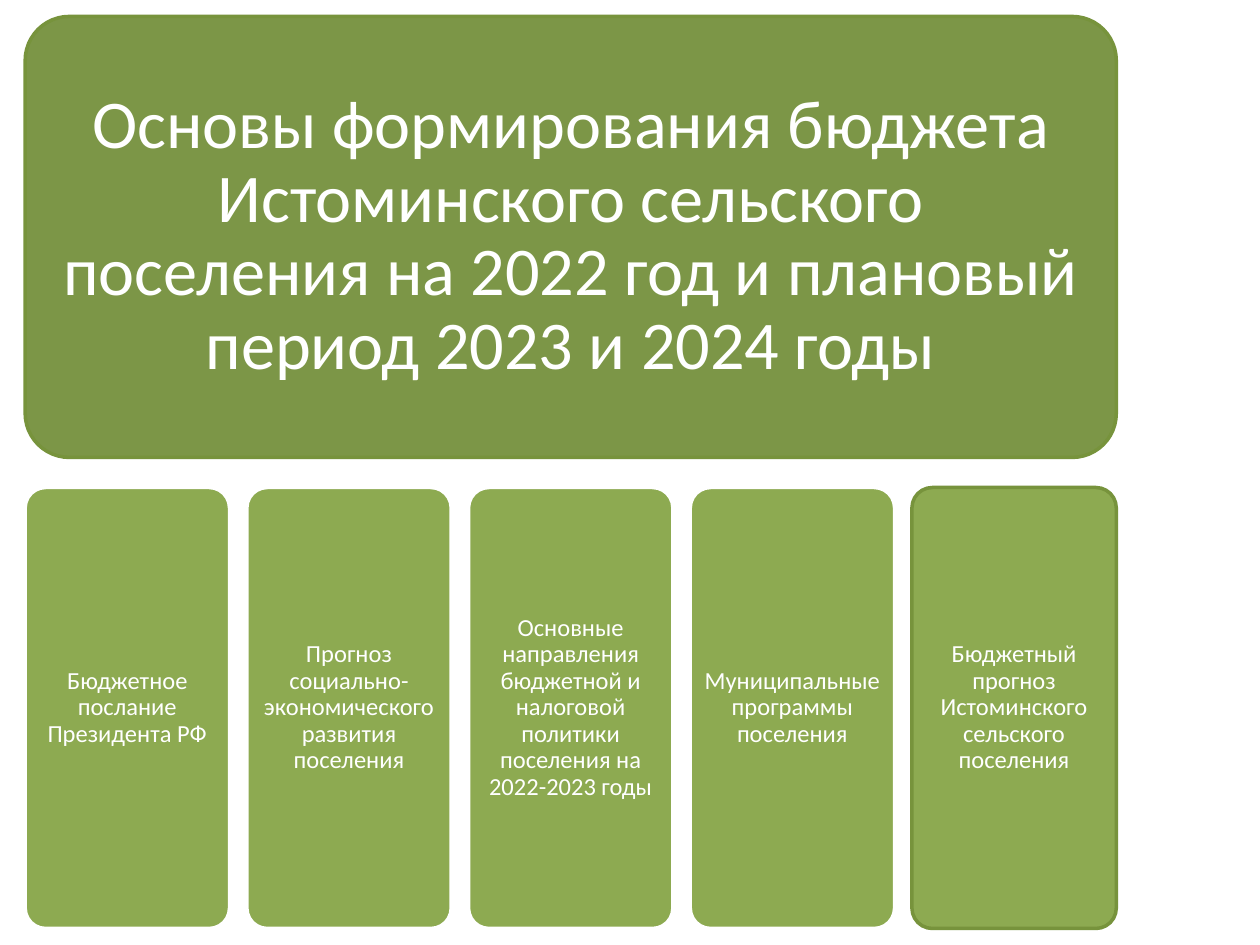
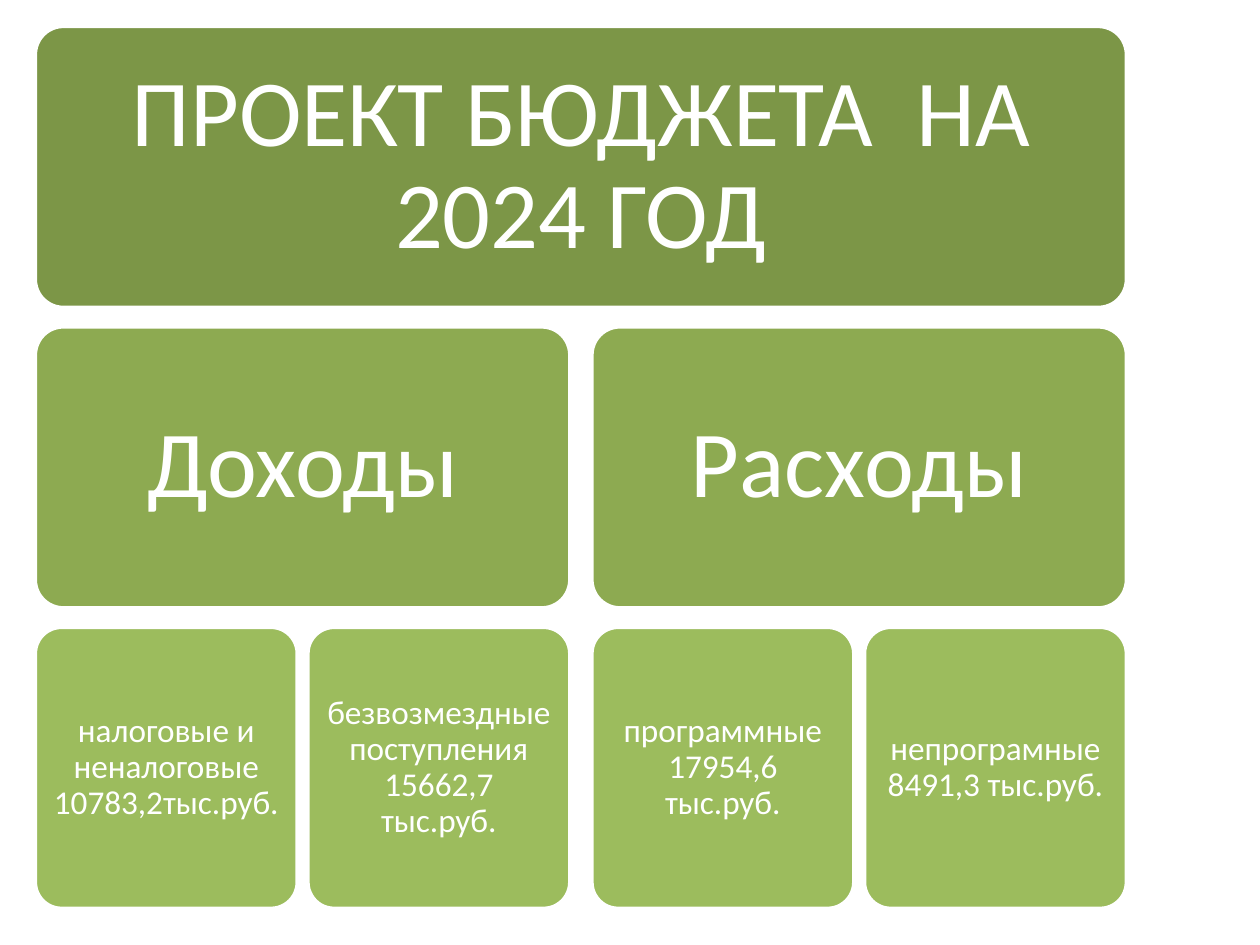
import dataclasses

import pptx
import pptx.dml.color
import pptx.enum.shapes
import pptx.enum.text
import pptx.util

Pt = pptx.util.Pt


@dataclasses.dataclass(frozen=True)
class Theme:
    font: str = "Calibri"
    white: str = "FFFFFF"
    outline: str = "77933C"
    dark: str = "7C9647"
    middle: str = "8DAA51"
    light: str = "9CBC5D"
    long_title: float = 39
    large: float = 54
    detail: float = 19
    small: float = 14
    line_width: float = 2
    corner: float = 0.1
    inset_ratio: float = 0.3  # text margin as a share of the type size


theme = Theme()


def write(box, text, *, size):
    frame = box.text_frame
    frame.word_wrap = True
    frame.auto_size = pptx.enum.text.MSO_AUTO_SIZE.NONE
    frame.vertical_anchor = pptx.enum.text.MSO_ANCHOR.MIDDLE
    inset = Pt(size * theme.inset_ratio)
    frame.margin_left = frame.margin_right = inset
    frame.margin_top = frame.margin_bottom = inset
    para = frame.paragraphs[0]
    para.alignment = pptx.enum.text.PP_ALIGN.CENTER
    para.line_spacing = 0.9
    span = para.add_run()
    span.text = text
    span.font.name = theme.font
    span.font.size = Pt(size)
    span.font.color.rgb = pptx.dml.color.RGBColor.from_string(theme.white)


def add_card(page, left, top, width, height, fill, line=theme.white):
    card = page.shapes.add_shape(
        pptx.enum.shapes.MSO_SHAPE.ROUNDED_RECTANGLE,
        Pt(left), Pt(top), Pt(width), Pt(height))
    card.adjustments[0] = theme.corner
    card.shadow.inherit = False
    card.fill.solid()
    card.fill.fore_color.rgb = pptx.dml.color.RGBColor.from_string(fill)
    card.line.color.rgb = pptx.dml.color.RGBColor.from_string(line)
    card.line.width = Pt(theme.line_width)
    return card


deck = pptx.Presentation()
deck.slide_width, deck.slide_height = Pt(720), Pt(540)
content_width = 623.5

# Banners with titles, shared by both slides
banners = [
    ("Основы формирования бюджета Истоминского сельского поселения "
     "на 2022 год и плановый период 2023 и 2024 годы",
     theme.long_title, 14.4, 9.4, 252, theme.outline),
    ("ПРОЕКТ БЮДЖЕТА  НА 2024 ГОД",
     theme.large, 20.2, 15.1, 160.6, theme.white),
]
for text, size, left, top, height, line in banners:
    page = deck.slides.add_slide(deck.slide_layouts[5])
    add_card(page, left, top, content_width, height, theme.dark, line)
    # The title fills the area inside the rounded corners, above the banner
    title = page.shapes.title
    corner_inset = 0.29 * theme.corner * height
    title.left, title.top = Pt(left + corner_inset), Pt(top + corner_inset)
    title.width = Pt(content_width - 2 * corner_inset)
    title.height = Pt(height - 2 * corner_inset)
    write(title, text, size=size)
    title.element.getparent().append(title.element)

basis_page, budget_page = deck.slides

# Slide 1: five foundations of the budget
foundations = [
    "Бюджетное послание Президента РФ",
    "Прогноз социально-экономического развития поселения",
    "Основные направления бюджетной и налоговой политики поселения "
    "на 2022-2023 годы",
    "Муниципальные программы поселения",
    "Бюджетный прогноз Истоминского сельского поселения",
]
gap = 9.9
width = (content_width - gap * (len(foundations) - 1)) / len(foundations)
for index, text in enumerate(foundations):
    is_last = index == len(foundations) - 1
    card = add_card(basis_page, 14.4 + index * (width + gap), 278.6,
                    width, 252, theme.middle,
                    theme.outline if is_last else theme.white)
    write(card, text, size=theme.small)

# Slide 2: revenue and spending, each with two parts
branches = {
    "Доходы": ["налоговые и неналоговые 10783,2тыс.руб.",
               "безвозмездные поступления 15662,7 тыс.руб."],
    "Расходы": ["программные 17954,6 тыс.руб.",
                "непрограмные 8491,3 тыс.руб."],
}
row_height, row_step = 160.6, 171.7
branch_gap, part_gap = 12.6, 6.1
branch_width = (content_width - branch_gap) / 2
part_width = (branch_width - part_gap) / 2
branch_top = 15.1 + row_step
for column, (branch, parts) in enumerate(branches.items()):
    branch_left = 20.2 + column * (branch_width + branch_gap)
    card = add_card(budget_page, branch_left, branch_top,
                    branch_width, row_height, theme.middle)
    write(card, branch, size=theme.large)
    for index, part in enumerate(parts):
        card = add_card(budget_page,
                        branch_left + index * (part_width + part_gap),
                        branch_top + row_step,
                        part_width, row_height, theme.light)
        write(card, part, size=theme.detail)

deck.save("out.pptx")
